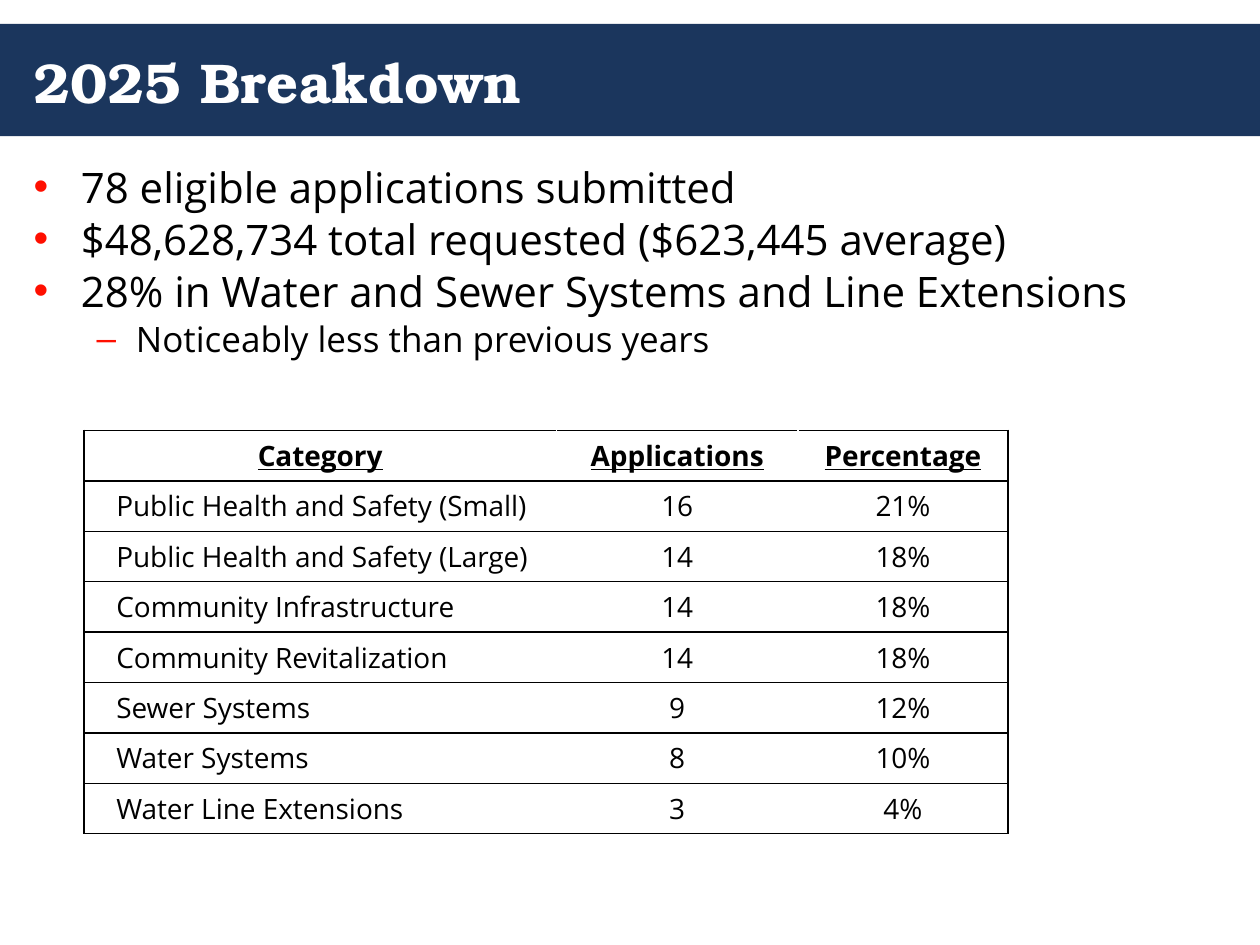
from lxml import etree
from pptx import Presentation
from pptx.dml.color import RGBColor
from pptx.enum.shapes import MSO_SHAPE
from pptx.enum.text import MSO_ANCHOR, MSO_AUTO_SIZE, PP_ALIGN
from pptx.oxml.ns import qn
from pptx.util import Pt

RECTANGLE = MSO_SHAPE.RECTANGLE
MIDDLE, TOP = MSO_ANCHOR.MIDDLE, MSO_ANCHOR.TOP
NO_AUTOFIT = MSO_AUTO_SIZE.NONE
LEFT, CENTER = PP_ALIGN.LEFT, PP_ALIGN.CENTER

NAVY, RED, BLACK, WHITE = "1B365D", "FF0F00", "000000", "FFFFFF"
TITLE_FONT, BODY_FONT = "TeX Gyre Bonum", "Open Sans"

# text, level
POINTS = [
    ("78 eligible applications submitted", 0),
    ("$48,628,734 total requested ($623,445 average)", 0),
    ("28% in Water and Sewer Systems and Line Extensions", 0),
    ("Noticeably less than previous years", 1),
]
# bullet, font size, left margin, hanging indent for each level
LEVELS = [("•", 24, 27, 27), ("–", 20, 58.5, 22.5)]

ROWS = [
    ("Category", "Applications", "Percentage"),
    ("Public Health and Safety (Small)", "16", "21%"),
    ("Public Health and Safety (Large)", "14", "18%"),
    ("Community Infrastructure", "14", "18%"),
    ("Community Revitalization", "14", "18%"),
    ("Sewer Systems", "9", "12%"),
    ("Water Systems", "8", "10%"),
    ("Water Line Extensions", "3", "4%"),
]
COLUMN_WIDTHS = [270, 138, 120]
ROW_HEIGHT = 28.8


def color(value):
    return RGBColor.from_string(value)


class SlideBuilder:
    def __init__(self, slide):
        self.slide = slide

    def place(self, shape, left, top, width, height):
        shape.left, shape.top = Pt(left), Pt(top)
        shape.width, shape.height = Pt(width), Pt(height)

    def span(self, para, text, size, ink=BLACK, font=BODY_FONT, bold=False, underline=False):
        span = para.add_run()
        span.text = text
        span.font.name, span.font.size = font, Pt(size)
        span.font.bold, span.font.underline = bold, underline
        span.font.color.rgb = color(ink)

    def title(self, text):
        """Write the title over a band that spans the slide."""
        title = self.slide.shapes.title
        self.place(title, 12, 13.7, 696, 64.8)
        frame = title.text_frame
        frame.auto_size, frame.vertical_anchor = NO_AUTOFIT, MIDDLE
        para = frame.paragraphs[0]
        para.alignment = LEFT
        self.span(para, text, 32, WHITE, TITLE_FONT, bold=True)

        band = self.slide.shapes.add_shape(RECTANGLE, 0, Pt(13.7), Pt(720), Pt(64.1))
        band.shadow.inherit = False
        band.fill.solid()
        band.fill.fore_color.rgb = color(NAVY)
        band.line.fill.background()
        title.element.addprevious(band.element)

    def bullet(self, para, mark, margin, hanging):
        props = para._p.get_or_add_pPr()
        props.set("marL", str(Pt(margin)))
        props.set("indent", str(-Pt(hanging)))
        tint = etree.SubElement(props, qn("a:buClr"))
        etree.SubElement(tint, qn("a:srgbClr"), val=RED)
        etree.SubElement(props, qn("a:buChar"), char=mark)

    def points(self, items):
        body = self.slide.placeholders[1]
        self.place(body, 12, 90, 696, 156)
        frame = body.text_frame
        frame.auto_size, frame.vertical_anchor = NO_AUTOFIT, TOP
        frame.margin_top = Pt(2)
        for index, (text, level) in enumerate(items):
            para = frame.add_paragraph() if index else frame.paragraphs[0]
            mark, size, margin, hanging = LEVELS[level]
            para.level = level
            para.space_before = Pt(1 if index else 0)
            self.bullet(para, mark, margin, hanging)
            self.span(para, text, size)

    def borders(self, cell, **sides):
        props = cell._tc.get_or_add_tcPr()
        for side, ink in sides.items():
            line = etree.SubElement(props, qn(f"a:ln{side}"), w=str(Pt(1)))
            fill = etree.SubElement(line, qn("a:solidFill"))
            etree.SubElement(fill, qn("a:srgbClr"), val=ink)

    def table(self, rows, widths, left, top):
        frame = self.slide.shapes.add_table(
            len(rows), len(widths), Pt(left), Pt(top),
            Pt(sum(widths)), Pt(ROW_HEIGHT * len(rows)))
        table = frame.table
        table.first_row = table.horz_banding = False
        for column, width in zip(table.columns, widths):
            column.width = Pt(width)
        last = len(widths) - 1
        for r, texts in enumerate(rows):
            table.rows[r].height = Pt(ROW_HEIGHT)
            for c, text in enumerate(texts):
                cell = table.cell(r, c)
                header, label = r == 0, r > 0 and c == 0
                cell.vertical_anchor = MIDDLE
                cell.margin_left = Pt(18.5 if label else 0)
                cell.margin_right = cell.margin_top = cell.margin_bottom = 0
                self.borders(cell, L=WHITE if c else BLACK,
                             R=BLACK if c == last else WHITE, T=BLACK, B=BLACK)
                cell.fill.background()
                para = cell.text_frame.paragraphs[0]
                para.alignment = LEFT if label else CENTER
                self.span(para, text, 16, bold=header, underline=header)


def main():
    deck = Presentation()
    deck.slide_width, deck.slide_height = Pt(720), Pt(540)
    page = SlideBuilder(deck.slides.add_slide(deck.slide_layouts[1]))
    page.title("2025 Breakdown")
    page.points(POINTS)
    page.table(ROWS, COLUMN_WIDTHS, 48, 246)
    deck.save("out.pptx")


if __name__ == "__main__":
    main()
